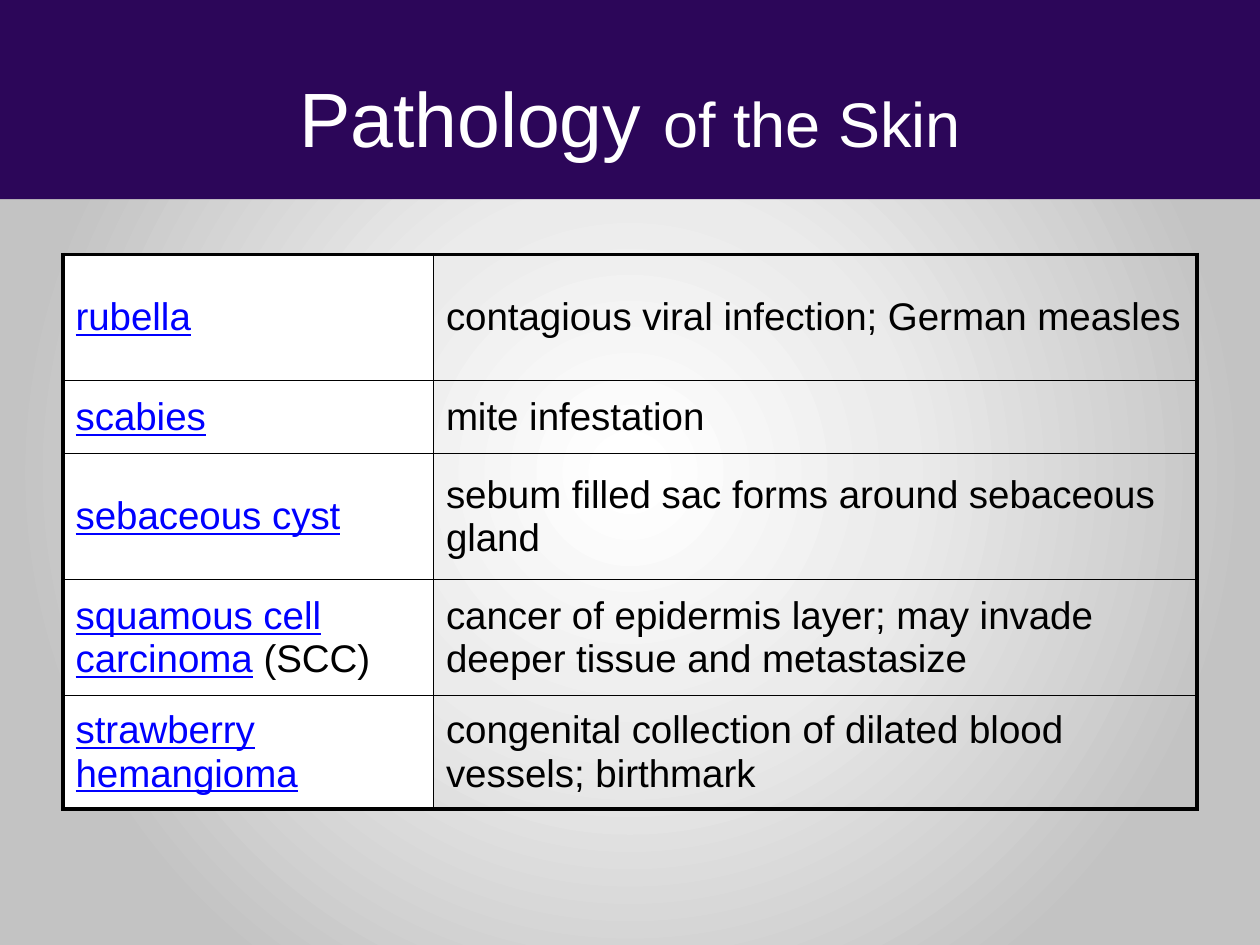
from dataclasses import dataclass

from lxml.etree import SubElement
from pptx import Presentation
from pptx.dml.color import RGBColor
from pptx.enum.shapes import MSO_SHAPE
from pptx.enum.text import MSO_ANCHOR, PP_ALIGN
from pptx.oxml.ns import qn
from pptx.util import Inches, Pt

TITLE = [("Pathology ", "title"), ("of the Skin", "subtitle")]
# Each row: linked term, plain suffix, definition, row height in inches
CONDITIONS = [
    ("rubella", "", "contagious viral infection; German measles", 1),
    ("scabies", "", "mite infestation", 0.58),
    ("sebaceous cyst", "", "sebum filled sac forms around sebaceous gland", 1),
    ("squamous cell carcinoma", " (SCC)",
     "cancer of epidermis layer; may invade deeper tissue and metastasize", 0.92),
    ("strawberry hemangioma", "",
     "congenital collection of dilated blood vessels; birthmark", 0.9),
]


@dataclass(frozen=True)
class Theme:
    font: str = "Arial"
    band: str = "2C0659"
    term_fill: str = "FFFFFF"
    border: str = "000000"
    outer_line: float = 2.25
    inner_line: float = 1
    backdrop: tuple = ((2, "FFFFFF"), (35, "EBEBEB"), (79, "C3C3C3"))


THEME = Theme()
TEXT_FORMATS = {
    "title": {"size": 44, "color": "FFFFFF", "underline": False},
    "subtitle": {"size": 36, "color": "FFFFFF", "underline": False},
    "term": {"size": 22, "color": "0000FF", "underline": True},
    "body": {"size": 22, "color": "000000", "underline": False},
}
SLIDE_WIDTH, SLIDE_HEIGHT = Inches(10), Inches(7.5)
MARGIN = SLIDE_WIDTH * 0.05
CONTENT_WIDTH = SLIDE_WIDTH - 2 * MARGIN
BAND_HEIGHT = Inches(1.58)
TABLE_TOP = Inches(2.02)
COLUMN_WIDTHS = (2.94, 6.06)


def write_runs(text_frame, runs):
    paragraph = text_frame.paragraphs[0]
    for text, format_name in runs:
        values = TEXT_FORMATS[format_name]
        run = paragraph.add_run()
        run.text = text
        settings = {"name": THEME.font, "size": Pt(values["size"]),
                    "underline": values["underline"]}
        for attribute, value in settings.items():
            setattr(run.font, attribute, value)
        run.font.color.rgb = RGBColor.from_string(values["color"])
    return paragraph


def add_color(parent, color):
    SubElement(parent, qn("a:srgbClr"), val=color)


def paint_backdrop(slide):
    """Fill the background with a circular gradient around the slide's centre."""
    slide.background.fill.solid()
    properties = slide.element.find(".//" + qn("p:bgPr"))
    properties.remove(properties.find(qn("a:solidFill")))
    gradient = SubElement(properties, qn("a:gradFill"), rotWithShape="1")
    properties.insert(0, gradient)
    stops = SubElement(gradient, qn("a:gsLst"))
    for position, color in THEME.backdrop:
        add_color(SubElement(stops, qn("a:gs"), pos=str(position * 1000)), color)
    circle = SubElement(gradient, qn("a:path"), path="circle")
    SubElement(circle, qn("a:fillToRect"), dict.fromkeys("ltrb", "50000"))


def add_header(slide):
    band = slide.shapes.add_shape(MSO_SHAPE.RECTANGLE, 0, 0, SLIDE_WIDTH, BAND_HEIGHT)
    band.shadow.inherit = False
    band.fill.solid()
    band.fill.fore_color.rgb = RGBColor.from_string(THEME.band)
    band.line.fill.background()
    title = slide.shapes.title
    title.element.addprevious(band.element)
    box = {"left": int(MARGIN), "top": Inches(0.3),
           "width": int(CONTENT_WIDTH), "height": Inches(1.25)}
    for attribute, value in box.items():
        setattr(title, attribute, value)
    title.text_frame.vertical_anchor = MSO_ANCHOR.MIDDLE
    write_runs(title.text_frame, TITLE).alignment = PP_ALIGN.CENTER


def set_borders(cell, outer_sides):
    """Draw all four borders, with the heavy line on the table's outer sides."""
    properties = cell._tc.get_or_add_tcPr()
    for index, side in enumerate("LRTB"):
        width = THEME.outer_line if side in outer_sides else THEME.inner_line
        line = SubElement(properties, qn(f"a:ln{side}"), w=str(Pt(width)))
        add_color(SubElement(line, qn("a:solidFill")), THEME.border)
        properties.insert(index, line)


def add_conditions_table(slide):
    heights = [Inches(condition[-1]) for condition in CONDITIONS]
    table = slide.shapes.add_table(
        len(CONDITIONS), len(COLUMN_WIDTHS), int(MARGIN), TABLE_TOP,
        int(CONTENT_WIDTH), sum(heights)).table
    table.first_row = table.horz_banding = False
    for column, width in zip(table.columns, COLUMN_WIDTHS):
        column.width = Inches(width)
    for index, (term, suffix, definition, _) in enumerate(CONDITIONS):
        table.rows[index].height = heights[index]
        term_cell, definition_cell = table.rows[index].cells
        term_runs = [(term, "term")] + ([(suffix, "body")] if suffix else [])
        write_runs(term_cell.text_frame, term_runs)
        write_runs(definition_cell.text_frame, [(definition, "body")])
        term_cell.fill.solid()
        term_cell.fill.fore_color.rgb = RGBColor.from_string(THEME.term_fill)
        definition_cell.fill.background()
        row_sides = {0: "T", len(CONDITIONS) - 1: "B"}.get(index, "")
        for cell, column_side in ((term_cell, "L"), (definition_cell, "R")):
            cell.vertical_anchor = MSO_ANCHOR.MIDDLE
            set_borders(cell, column_side + row_sides)


def main():
    presentation = Presentation()
    presentation.slide_width, presentation.slide_height = SLIDE_WIDTH, SLIDE_HEIGHT
    slide = presentation.slides.add_slide(
        presentation.slide_layouts.get_by_name("Title Only"))
    paint_backdrop(slide)
    add_header(slide)
    add_conditions_table(slide)
    presentation.save("out.pptx")


if __name__ == "__main__":
    main()
